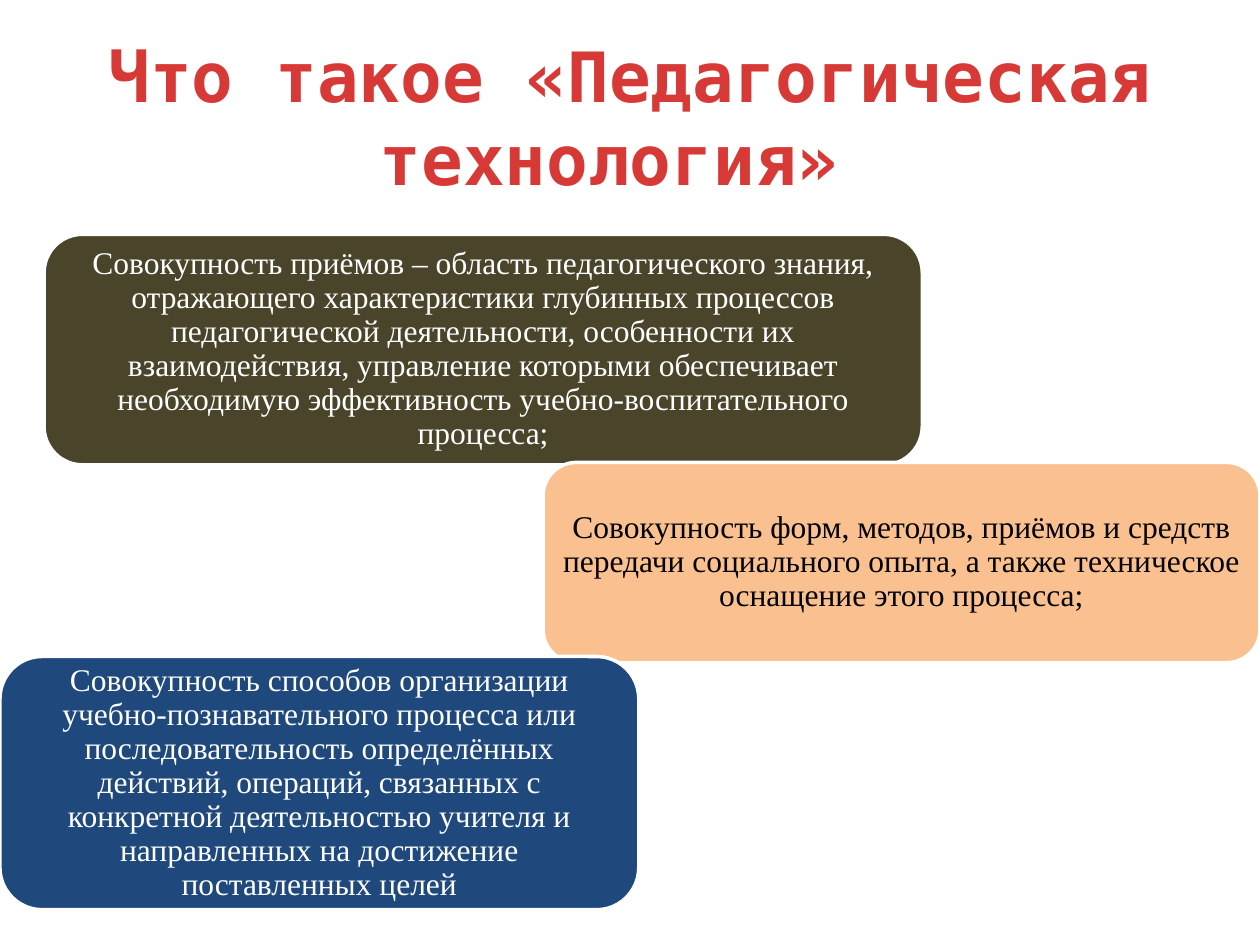
from pptx import Presentation
from pptx.dml.color import RGBColor
from pptx.enum.shapes import MSO_SHAPE as Shape
from pptx.enum.text import MSO_ANCHOR as Anchor, MSO_AUTO_SIZE as AutoSize, PP_ALIGN as Align
from pptx.util import Inches, Pt

RED = RGBColor(0xD7, 0x3A, 0x36)
OLIVE = RGBColor(0x4A, 0x45, 0x2A)
PEACH = RGBColor(0xFA, 0xC0, 0x90)
NAVY = RGBColor(0x1F, 0x49, 0x7D)
WHITE = RGBColor(0xFF, 0xFF, 0xFF)
BLACK = RGBColor(0, 0, 0)

deck = Presentation()
deck.slide_width, deck.slide_height = Inches(10), Inches(7.5)
slide = deck.slides.add_slide(deck.slide_layouts[5])


def percent_box(left, top, width, height):
    column, row = deck.slide_width / 100, deck.slide_height / 100
    return [round(v) for v in (left * column, top * row, width * column, height * row)]


def apply(target, values):
    for name, value in values.items():
        setattr(target, name, value)


title = slide.shapes.title
apply(title, dict(zip(("left", "top", "width", "height"), percent_box(5, 4, 90, 16.67))))
title.text_frame.text = "Что такое «Педагогическая технология» "
apply(title.text_frame, {"vertical_anchor": Anchor.MIDDLE, "word_wrap": True,
                         "auto_size": AutoSize.NONE})
heading = title.text_frame.paragraphs[0]
heading.alignment = Align.CENTER
heading_font = heading.runs[0].font
apply(heading_font, {"name": "DejaVu Sans Mono", "size": Pt(39.6), "bold": True})
heading_font.color.rgb = RED

FRAME_FORMAT = {
    "margin_left": Inches(0.07), "margin_right": Inches(0.07),
    "margin_top": Inches(0.04), "margin_bottom": Inches(0.04),
    "vertical_anchor": Anchor.MIDDLE, "word_wrap": True,
}
PARAGRAPH_FORMAT = {"alignment": Align.CENTER, "line_spacing": 0.9}
FONT_FORMAT = {"name": "Times New Roman", "size": Pt(18)}

definitions = [
    ((3.5, 24.8, 69.7, 24.4), OLIVE, WHITE,
     "Совокупность приёмов – область педагогического знания, отражающего "
     "характеристики глубинных процессов педагогической деятельности, особенности "
     "их взаимодействия, управление которыми обеспечивает необходимую "
     "эффективность учебно-воспитательного процесса;"),
    ((43.1, 48.93, 56.9, 21.2), PEACH, BLACK,
     "Совокупность форм, методов, приёмов и средств передачи социального опыта, "
     "а также техническое оснащение этого процесса;"),
    ((0, 69.47, 50.7, 26.8), NAVY, WHITE,
     "Совокупность способов организации учебно-познавательного процесса или "
     "последовательность определённых действий, операций, связанных с конкретной "
     "деятельностью учителя и направленных на достижение поставленных целей"),
]

for place, fill_color, text_color, wording in definitions:
    card = slide.shapes.add_shape(Shape.ROUNDED_RECTANGLE, *percent_box(*place))
    card.shadow.inherit = False
    card.fill.solid()
    card.fill.fore_color.rgb = fill_color
    card.line.color.rgb = WHITE
    card.line.width = Pt(2)
    apply(card.text_frame, FRAME_FORMAT)
    definition = card.text_frame.paragraphs[0]
    definition.text = wording
    apply(definition, PARAGRAPH_FORMAT)
    definition_font = definition.runs[0].font
    apply(definition_font, FONT_FORMAT)
    definition_font.color.rgb = text_color

deck.save("out.pptx")
